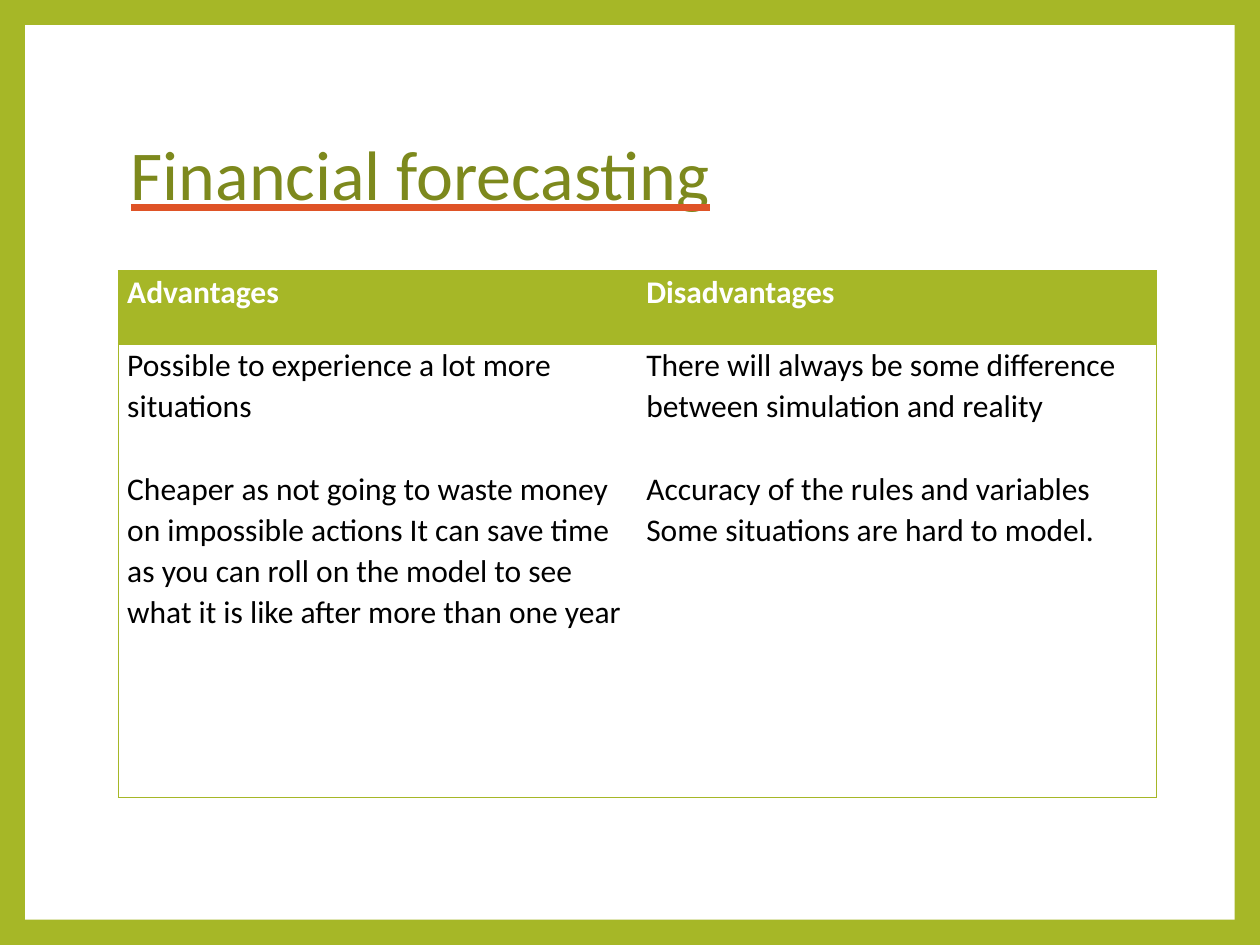
from dataclasses import dataclass

from lxml.etree import SubElement
from pptx import Presentation
from pptx.dml.color import RGBColor
from pptx.enum.shapes import MSO_SHAPE
from pptx.enum.text import MSO_ANCHOR
from pptx.oxml import parse_xml
from pptx.oxml.ns import nsdecls, qn
from pptx.util import Inches, Pt


@dataclass(frozen=True)
class Theme:
    """Colours, font and type sizes of the slide."""
    green: str = "A6B727"
    olive: str = "7D891D"
    orange: str = "DF5327"
    white: str = "FFFFFF"
    black: str = "000000"
    font: str = "Calibri"
    title_size: float = 40
    body_size: float = 18
    paragraph_gap: float = 23.5
    border_width: float = 0.79


def write_text(paragraph, text, *, font, size, color, bold=False, line_spacing=1.0, underline=None):
    """Add a formatted run, optionally underlined in a given colour."""
    paragraph.line_spacing = line_spacing
    run = paragraph.add_run()
    run.text = text
    run.font.size = Pt(size)
    run.font.bold = bold
    run.font.color.rgb = RGBColor.from_string(color)
    if underline:
        run.font.underline = True
        fill = SubElement(run.font._element, qn("a:uFill"))
        solid = SubElement(fill, qn("a:solidFill"))
        SubElement(solid, qn("a:srgbClr"), val=underline)
    run.font.name = font


class SlideBuilder:
    """Places styled elements on the current slide."""

    def __init__(self, slide, theme):
        """Keep the slide and its theme."""
        self.slide = slide
        self.theme = theme

    def background(self, color):
        """Fill the slide background."""
        fill = self.slide.background.fill
        fill.solid()
        fill.fore_color.rgb = RGBColor.from_string(color)

    def panel(self, left, top, width, height, color):
        """Add a plain rectangle."""
        shape = self.slide.shapes.add_shape(
            MSO_SHAPE.RECTANGLE, Inches(left), Inches(top), Inches(width), Inches(height))
        shape.shadow.inherit = False
        shape.fill.solid()
        shape.fill.fore_color.rgb = RGBColor.from_string(color)
        shape.line.fill.background()

    def title(self, text, left, top, width, height):
        """Add the underlined heading."""
        box = self.slide.shapes.add_textbox(
            Inches(left), Inches(top), Inches(width), Inches(height))
        frame = box.text_frame
        frame.word_wrap = True
        frame.vertical_anchor = MSO_ANCHOR.MIDDLE
        write_text(frame.paragraphs[0], text, font=self.theme.font, size=self.theme.title_size,
                   color=self.theme.olive, line_spacing=0.9, underline=self.theme.orange)

    def table(self, rows, left, top, column_widths, row_heights):
        """Add a table with a filled header and an outer border."""
        shape = self.slide.shapes.add_table(
            len(rows), len(column_widths), Inches(left), Inches(top),
            Inches(sum(column_widths)), Inches(sum(row_heights)))
        table = shape.table
        table.horz_banding = False
        for column, width in zip(table.columns, column_widths):
            column.width = Inches(width)
        for row, height in zip(table.rows, row_heights):
            row.height = Inches(height)
        last_column = len(column_widths) - 1
        for row_index, row in enumerate(rows):
            for column_index, paragraphs in enumerate(row):
                cell = table.cell(row_index, column_index)
                self.cell(cell, paragraphs, header=row_index == 0)
                self.borders(cell, L=column_index == 0, R=column_index == last_column,
                             T=True, B=True)

    def cell(self, cell, paragraphs, header):
        """Fill one cell and write its paragraphs."""
        theme = self.theme
        cell.margin_left = cell.margin_right = Inches(0.07)
        cell.margin_top = cell.margin_bottom = 0
        cell.fill.solid()
        cell.fill.fore_color.rgb = RGBColor.from_string(theme.green if header else theme.white)
        frame = cell.text_frame
        for index, text in enumerate(paragraphs):
            paragraph = frame.add_paragraph() if index else frame.paragraphs[0]
            if index:
                paragraph.space_before = Pt(theme.paragraph_gap)
            write_text(paragraph, text, font=theme.font, size=theme.body_size, bold=header,
                       color=theme.white if header else theme.black, line_spacing=1.07)

    def borders(self, cell, **sides):
        """Draw or hide each side of a cell."""
        properties = cell._tc.get_or_add_tcPr()
        solid = f'<a:solidFill><a:srgbClr val="{self.theme.green}"/></a:solidFill>'
        for index, (side, visible) in enumerate(sides.items()):
            properties.insert(index, parse_xml(
                f'<a:ln{side} {nsdecls("a")} w="{Pt(self.theme.border_width)}">'
                f'{solid if visible else "<a:noFill/>"}</a:ln{side}>'))


def main():
    """Build and save the slide."""
    presentation = Presentation()
    presentation.slide_width = Inches(10)
    presentation.slide_height = Inches(7.5)
    theme = Theme()
    builder = SlideBuilder(presentation.slides.add_slide(presentation.slide_layouts[6]), theme)
    builder.background(theme.green)
    builder.panel(0.2, 0.2, 9.6, 7.1, theme.white)
    builder.title("Financial forecasting", 0.94, 0.67, 8.1, 1.48)
    rows = [
        [["Advantages"], ["Disadvantages"]],
        [
            ["Possible to experience a lot more situations",
             "Cheaper as not going to waste money on impossible actions It can save time as you "
             "can roll on the model to see what it is like after more than one year"],
            ["There will always be some difference between simulation and reality",
             "Accuracy of the rules and variables Some situations are hard to model."],
        ],
    ]
    builder.table(rows, 0.94, 2.15, [4.12, 4.12], [0.58, 3.6])
    presentation.save("out.pptx")


if __name__ == "__main__":
    main()
